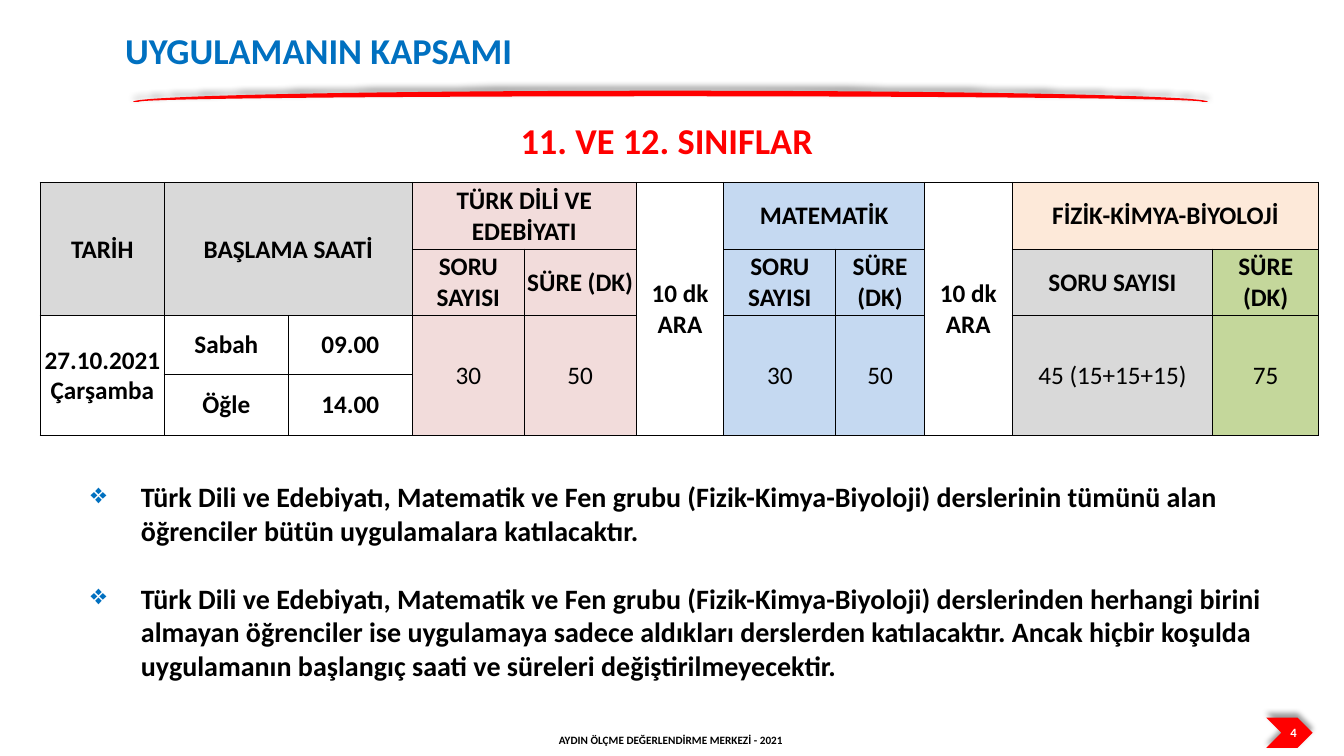
from dataclasses import dataclass

from lxml import etree
from pptx import Presentation
from pptx.dml.color import RGBColor
from pptx.enum.shapes import MSO_SHAPE as SHAPE
from pptx.enum.text import MSO_ANCHOR as ANCHOR, PP_ALIGN as ALIGN
from pptx.oxml import parse_xml
from pptx.oxml.ns import nsdecls, qn
from pptx.util import Inches, Pt


@dataclass(frozen=True)
class Theme:
    font: str = "Calibri"
    black: str = "000000"
    white: str = "FFFFFF"
    blue: str = "0070C0"
    red: str = "FF0000"
    grey: str = "D9D9D9"
    pink: str = "F2DCDB"
    sky: str = "C5D9F1"
    peach: str = "FDE9D9"
    green: str = "C4D79B"
    heading: int = 26
    body: int = 20
    cell: int = 18
    number: int = 9
    footer: int = 8


T = Theme()

COLUMNS = [1.23, 1.23, 1.23, 1.11, 1.11, 0.87, 1.11, 0.88, 0.87, 1.99, 1.05]
ROWS = [0.66, 0.66, 0.58, 0.58]
GROUP_EDGES = {0, 1, 3, 5, 6, 8, 9, len(COLUMNS)}

# Lesson: first column, name, header fill, question fill, time fill, questions, minutes
LESSONS = [
    (3, "TÜRK DİLİ VE EDEBİYATI", T.pink, T.pink, T.pink, "30", "50"),
    (6, "MATEMATİK", T.sky, T.sky, T.sky, "30", "50"),
    (9, "FİZİK-KİMYA-BİYOLOJİ", T.peach, T.grey, T.green, "45 (15+15+15)", "75"),
]
SESSIONS = [("Sabah", "09.00"), ("Öğle", "14.00")]
NOTES = [
    "Türk Dili ve Edebiyatı, Matematik ve Fen grubu (Fizik-Kimya-Biyoloji) "
    "derslerinin tümünü alan öğrenciler bütün uygulamalara katılacaktır.",
    "Türk Dili ve Edebiyatı, Matematik ve Fen grubu (Fizik-Kimya-Biyoloji) "
    "derslerinden herhangi birini almayan öğrenciler ise uygulamaya sadece "
    "aldıkları derslerden katılacaktır. Ancak hiçbir koşulda uygulamanın "
    "başlangıç saati ve süreleri değiştirilmeyecektir.",
]


def style(p, size, color=T.black, bold=True, align=ALIGN.CENTER):
    p.alignment = align
    for r in p.runs:
        r.font.name = T.font
        r.font.size = Pt(size)
        r.font.bold = bold
        r.font.color.rgb = RGBColor.from_string(color)


def add_text(s, box, text, size, color=T.black, anchor=ANCHOR.TOP):
    tf = s.shapes.add_textbox(*map(Inches, box)).text_frame
    tf.word_wrap = True
    tf.vertical_anchor = anchor
    tf.text = text
    style(tf.paragraphs[0], size, color)


def add_red_shape(s, kind, box):
    """Add a red shape with a soft shadow above it."""
    sp = s.shapes.add_shape(kind, *map(Inches, box))
    sp.fill.solid()
    sp.fill.fore_color.rgb = RGBColor.from_string(T.red)
    sp.line.fill.background()
    sp.shadow.inherit = False
    effects = sp.element.spPr.find(qn("a:effectLst"))
    effects.append(parse_xml(
        f'<a:outerShdw {nsdecls("a")} blurRad="{Pt(4)}" dist="{Pt(3)}" '
        f'dir="16200000" rotWithShape="0"><a:srgbClr val="{T.black}">'
        '<a:alpha val="40000"/></a:srgbClr></a:outerShdw>'))


def add_title(s, box):
    title = s.shapes.title
    title.left, title.top, title.width, title.height = map(Inches, box)
    tf = title.text_frame
    tf.text = "UYGULAMANIN KAPSAMI"
    tf.vertical_anchor = ANCHOR.TOP
    style(tf.paragraphs[0], T.heading, T.blue, align=ALIGN.LEFT)


def add_page_mark(s, left, top):
    add_red_shape(s, SHAPE.CHEVRON, (left, top, 0.46, 0.3))
    add_text(s, (left, top + 0.02, 0.54, 0.25), "4", T.number, T.white)


def set_borders(cell, widths):
    tc_pr = cell._tc.get_or_add_tcPr()
    for side, width in zip("LRTB", widths):
        tc_pr.append(parse_xml(
            f'<a:ln{side} {nsdecls("a")} w="{Pt(width)}"><a:solidFill>'
            f'<a:srgbClr val="{T.black}"/></a:solidFill></a:ln{side}>'))


def fill_cell(table, row, col, text, fill=None, rows=1, cols=1, bold=True):
    cell = table.cell(row, col)
    if rows * cols > 1:
        cell.merge(table.cell(row + rows - 1, col + cols - 1))
    vertical = [1 if edge in GROUP_EDGES else 0.5 for edge in (col, col + cols)]
    horizontal = [1 if edge in (0, len(ROWS)) else 0.5 for edge in (row, row + rows)]
    set_borders(cell, vertical + horizontal)
    if fill:
        cell.fill.solid()
        cell.fill.fore_color.rgb = RGBColor.from_string(fill)
    else:
        cell.fill.background()
    cell.margin_left = cell.margin_right = cell.margin_top = Inches(0.01)
    cell.margin_bottom = 0
    cell.vertical_anchor = ANCHOR.MIDDLE
    cell.text = text
    style(cell.text_frame.paragraphs[0], T.cell, bold=bold)


def add_schedule(s, left, top):
    frame = s.shapes.add_table(len(ROWS), len(COLUMNS), Inches(left), Inches(top),
                               Inches(sum(COLUMNS)), Inches(sum(ROWS)))
    table = frame.table
    table.first_row = table.horz_banding = False
    for column, width in zip(table.columns, COLUMNS):
        column.width = Inches(width)
    for row, height in zip(table.rows, ROWS):
        row.height = Inches(height)

    fill_cell(table, 0, 0, "TARİH", T.grey, rows=2)
    fill_cell(table, 0, 1, "BAŞLAMA SAATİ", T.grey, rows=2, cols=2)
    fill_cell(table, 2, 0, "27.10.2021 Çarşamba", rows=2)
    for row, session in enumerate(SESSIONS, 2):
        for col, text in enumerate(session, 1):
            fill_cell(table, row, col, text)
    for col in (5, 8):
        fill_cell(table, 0, col, "10 dk ARA", rows=4)
    for col, name, head_fill, count_fill, time_fill, count, minutes in LESSONS:
        fill_cell(table, 0, col, name, head_fill, cols=2)
        fill_cell(table, 1, col, "SORU SAYISI", count_fill)
        fill_cell(table, 1, col + 1, "SÜRE (DK)", time_fill)
        fill_cell(table, 2, col, count, count_fill, rows=2, bold=False)
        fill_cell(table, 2, col + 1, minutes, time_fill, rows=2, bold=False)


def add_notes_list(s, box):
    tf = s.shapes.add_textbox(*map(Inches, box)).text_frame
    tf.word_wrap = True
    for i, note in enumerate(NOTES):
        p = tf.add_paragraph() if i else tf.paragraphs[0]
        p.text = note
        p_pr = p._p.get_or_add_pPr()
        p_pr.set("marL", str(Inches(0.5)))
        p_pr.set("indent", str(-Inches(0.5)))
        color = etree.SubElement(p_pr, qn("a:buClr"))
        etree.SubElement(color, qn("a:srgbClr"), val=T.blue)
        etree.SubElement(p_pr, qn("a:buChar"), char="❖")
        if i:
            p.space_before = Pt(24.4)
        style(p, T.body, align=ALIGN.LEFT)


def build_scope_slide(prs):
    s = prs.slides.add_slide(prs.slide_layouts[5])
    add_page_mark(s, 12.56, 7.12)
    add_red_shape(s, SHAPE.BLOCK_ARC, (1.32, 0.9, 10.66, 0.22))
    add_text(s, (4.09, 7.23, 5.13, 0.22), "AYDIN ÖLÇME DEĞERLENDİRME MERKEZİ - 2021",
             T.footer, anchor=ANCHOR.MIDDLE)
    add_title(s, (1.14, 0.23, 4.74, 0.57))
    add_text(s, (5.02, 1.12, 3.19, 0.57), "11. VE 12. SINIFLAR", T.heading, T.red)
    add_schedule(s, 0.4, 1.81)
    add_notes_list(s, (0.8, 4.71, 12.16, 1.8))


def main():
    prs = Presentation()
    prs.slide_width, prs.slide_height = Inches(13.33), Inches(7.5)
    build_scope_slide(prs)
    prs.save("out.pptx")


if __name__ == "__main__":
    main()
